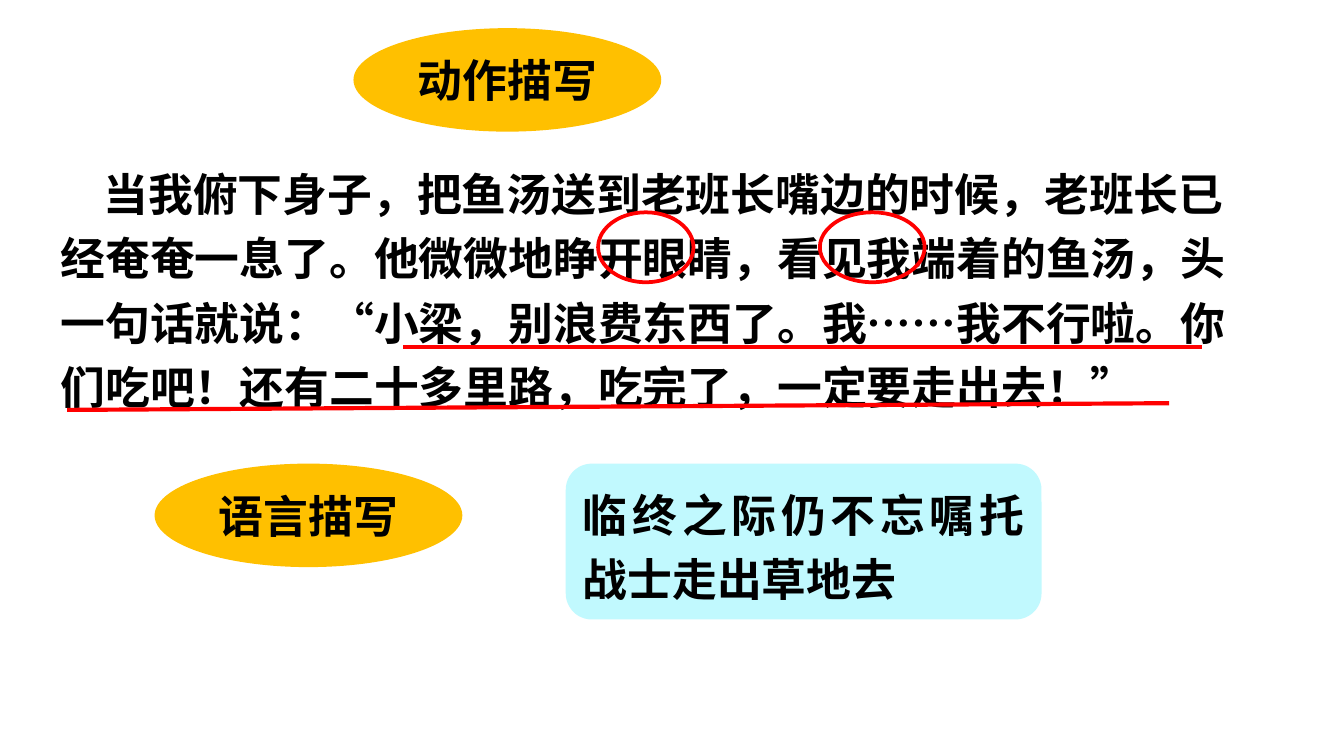
"""Build a slide on action and speech description in a Chinese reading passage."""
from lxml import etree
from pptx import Presentation
from pptx.dml.color import RGBColor
from pptx.enum import shapes, text
from pptx.oxml.ns import qn
from pptx.util import Inches, Pt

WHITE = RGBColor(0xFF, 0xFF, 0xFF)
BLACK = RGBColor(0x00, 0x00, 0x00)
RED = RGBColor(0xFF, 0x00, 0x00)
AMBER = RGBColor(0xFF, 0xC0, 0x00)
PALE_CYAN = RGBColor(0xC1, 0xF9, 0xFE)
CJK_FONT = "Noto Sans CJK SC"
LABEL_FONT = "Times New Roman"
OVAL = shapes.MSO_SHAPE.OVAL
PASSAGE = (
    "当我俯下身子，把鱼汤送到老班长嘴边的时候，老班长已经奄奄一息了。"
    "他微微地睁开眼睛，看见我端着的鱼汤，头一句话就说："
    "“小梁，别浪费东西了。我……我不行啦。你们吃吧！"
    "还有二十多里路，吃完了，一定要走出去！”"
)


def add_panel(slide, kind, box, fill):
    """Add a filled shape without outline or shadow."""
    shape = slide.shapes.add_shape(kind, *map(Inches, box))
    shape.shadow.inherit = False
    shape.fill.solid()
    shape.fill.fore_color.rgb = fill
    shape.line.fill.background()
    return shape


def write_text(shape, words, font_name, alignment, anchor, spacing=1.0, indent=0):
    """Write one bold black paragraph into a shape."""
    frame = shape.text_frame
    frame.word_wrap = True
    frame.vertical_anchor = anchor
    frame.margin_left = frame.margin_right = Inches(0.07)
    frame.margin_top = frame.margin_bottom = Inches(0.04)
    paragraph = frame.paragraphs[0]
    paragraph.text = words
    paragraph.alignment = alignment
    paragraph.line_spacing = spacing
    font = paragraph.font
    font.size = Pt(24)
    font.bold = True
    font.color.rgb = BLACK
    font.name = font_name
    properties = paragraph._p.get_or_add_pPr()
    properties.set("indent", str(Inches(indent)))
    latin = properties.find(qn("a:defRPr")).find(qn("a:latin"))
    east_asian = etree.Element(qn("a:ea"), typeface=CJK_FONT)
    latin.addnext(east_asian)


def add_text_block(slide, kind, box, fill, words, alignment, indent=0):
    """Add a top-anchored block of running text."""
    shape = add_panel(slide, kind, box, fill)
    write_text(shape, words, CJK_FONT, alignment, text.MSO_ANCHOR.TOP, 1.2, indent)


def add_label(slide, left, top, words):
    """Add an amber oval label."""
    shape = add_panel(slide, OVAL, (left, top, 2.29, 0.77), AMBER)
    write_text(shape, words, LABEL_FONT, text.PP_ALIGN.CENTER, text.MSO_ANCHOR.MIDDLE)


def add_ring(slide, left, width):
    """Add a red ring around a word of the passage."""
    ring = slide.shapes.add_shape(OVAL, *map(Inches, (left, 1.58, width, 0.52)))
    ring.shadow.inherit = False
    ring.fill.background()
    ring.line.color.rgb = RED
    ring.line.width = Pt(2)


def add_underline(slide, *ends):
    """Add a red line under spoken words."""
    line = slide.shapes.add_connector(
        shapes.MSO_CONNECTOR.STRAIGHT, *map(Inches, ends))
    line.line.color.rgb = RED
    line.line.width = Pt(2.25)
    etree.SubElement(line._element.spPr, qn("a:effectLst"))


def main():
    """Build and save the slide."""
    presentation = Presentation()
    presentation.slide_width = Inches(10)
    presentation.slide_height = Inches(10) * 9 // 16
    slide = presentation.slides.add_slide(presentation.slide_layouts[6])

    add_text_block(slide, shapes.MSO_SHAPE.RECTANGLE, (0.38, 1.12, 9.08, 1.95),
                   WHITE, PASSAGE, text.PP_ALIGN.LEFT, indent=0.32)
    add_text_block(slide, shapes.MSO_SHAPE.ROUNDED_RECTANGLE, (4.21, 3.45, 3.54, 1.16),
                   PALE_CYAN, "临终之际仍不忘嘱托战士走出草地去", text.PP_ALIGN.JUSTIFY)
    add_ring(slide, 4.45, 0.71)
    add_ring(slide, 6.1, 0.78)
    add_underline(slide, 3, 2.58, 8.94, 2.58)
    add_underline(slide, 0.5, 3.05, 8.7, 3)
    add_label(slide, 2.63, 0.21, "动作描写")
    add_label(slide, 1.15, 3.45, "语言描写")

    presentation.save("out.pptx")


if __name__ == "__main__":
    main()
